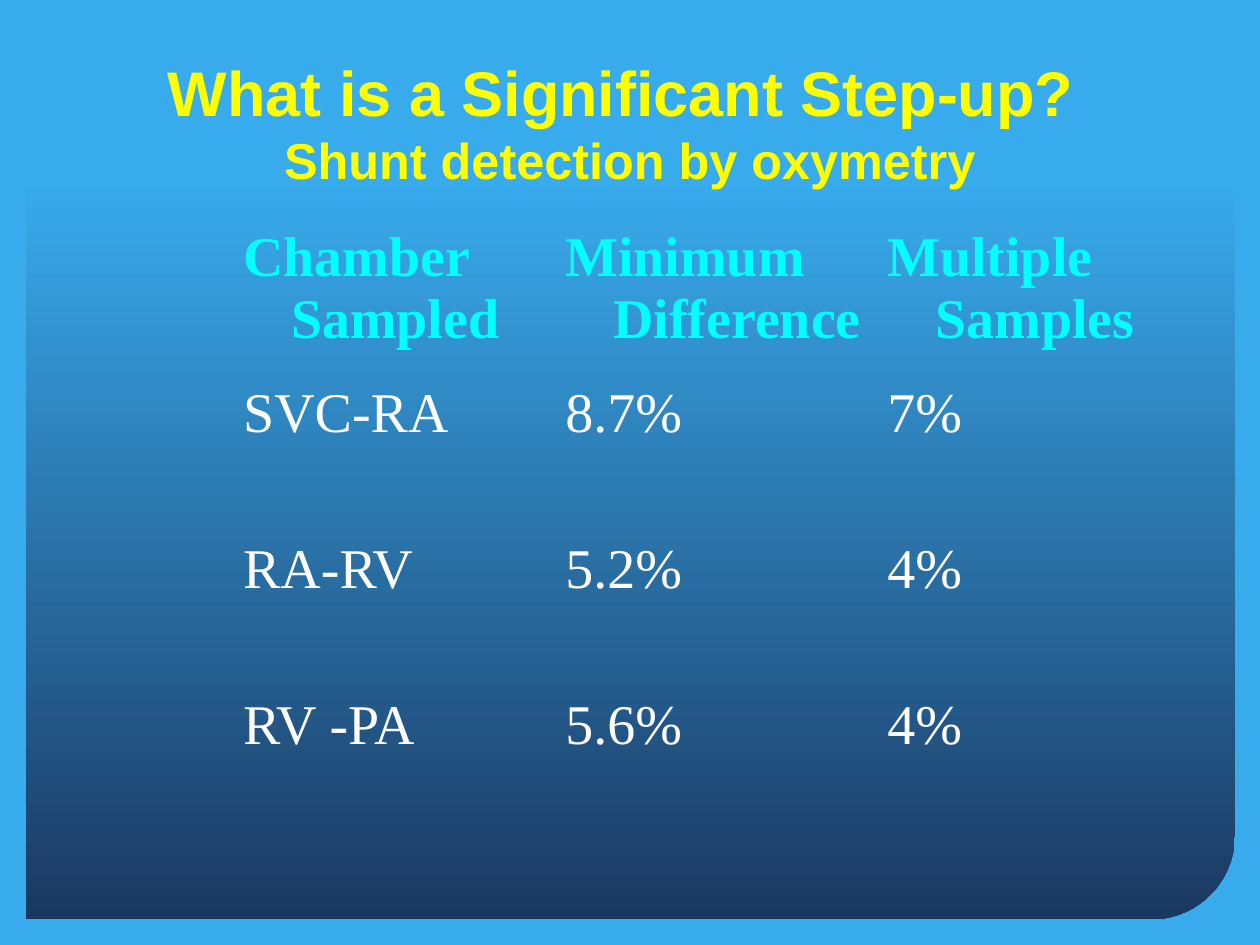
from dataclasses import dataclass

from pptx import Presentation
from pptx.dml.color import RGBColor
from pptx.enum.shapes import MSO_SHAPE
from pptx.enum.text import MSO_ANCHOR, MSO_AUTO_SIZE, PP_ALIGN
from pptx.util import Inches, Pt

PLAIN_TABLE_STYLE = "{2D5ABB26-0587-4C30-8999-92F81FD0307C}"


@dataclass(frozen=True)
class Theme:
    sky: str = "38ABED"
    navy: str = "1B3861"
    title: str = "FFFF00"
    header: str = "00FFFF"
    body: str = "FFFFFF"
    title_font: str = "Arial"
    table_font: str = "Times New Roman"
    title_size: float = 36
    subtitle_size: float = 28.8
    table_size: float = 32


class Page:
    """Holds the theme and the slide; places are shares of the slide's size."""

    def __init__(self, deck, theme):
        self.deck, self.theme = deck, theme
        self.slide = deck.slides.add_slide(deck.slide_layouts[5])
        background = self.slide.background.fill
        background.solid()
        background.fore_color.rgb = RGBColor.from_string(theme.sky)

    def area(self, left, top, width, height):
        across, down = self.deck.slide_width, self.deck.slide_height
        return (round(left * across), round(top * down),
                round(width * across), round(height * down))

    def style(self, font, name, size, color, bold):
        font.name, font.size, font.bold = name, Pt(size), bold
        font.color.rgb = RGBColor.from_string(color)

    def panel(self, *share):
        shapes = self.slide.shapes
        panel = shapes.add_shape(MSO_SHAPE.ROUND_2_DIAG_RECTANGLE, *self.area(*share))
        panel.adjustments[0], panel.adjustments[1] = 0.094, 0
        panel.shadow.inherit = False
        panel.line.fill.background()
        panel.fill.gradient()
        panel.fill.gradient_angle = 270
        stops = ((0.17, self.theme.sky), (1, self.theme.navy))
        for stop, (position, color) in zip(panel.fill.gradient_stops, stops):
            stop.position = position
            stop.color.rgb = RGBColor.from_string(color)
        shapes.title._element.addprevious(panel._element)

    def title(self, heading, subheading, *share):
        title = self.slide.shapes.title
        title.left, title.top, title.width, title.height = self.area(*share)
        frame = title.text_frame
        frame.text = f"{heading}\v{subheading}"
        frame.auto_size = MSO_AUTO_SIZE.NONE
        frame.vertical_anchor = MSO_ANCHOR.BOTTOM
        para = frame.paragraphs[0]
        para.alignment = PP_ALIGN.CENTER
        sizes = (self.theme.title_size, self.theme.subtitle_size)
        for span, size in zip(para.runs, sizes):
            self.style(span.font, self.theme.title_font, size, self.theme.title, True)

    def table(self, rows, *share):
        table = self.slide.shapes.add_table(
            len(rows), len(rows[0]), *self.area(*share)).table
        table._tbl.tblPr[0].text = PLAIN_TABLE_STYLE
        table.first_row = table.horz_banding = False
        for row_index, row in enumerate(rows):
            is_header = row_index == 0
            color = self.theme.header if is_header else self.theme.body
            for column_index, text in enumerate(row):
                cell = table.cell(row_index, column_index)
                cell.fill.background()
                cell.text = text
                para = cell.text_frame.paragraphs[0]
                self.hang(para, Inches(0.38))
                self.style(para.runs[0].font, self.theme.table_font,
                           self.theme.table_size, color, is_header)

    def hang(self, para, indent):
        """Indent every line of the paragraph but the first."""
        properties = para._p.get_or_add_pPr()
        properties.set("marL", str(indent))
        properties.set("indent", str(-indent))


def main():
    deck = Presentation()
    deck.slide_width, deck.slide_height = Inches(10), Inches(7.5)
    page = Page(deck, Theme())
    page.panel(0.021, 0.028, 0.959, 0.945)
    page.title("What is a Significant Step-up? ", "Shunt detection by oxymetry",
               0, 0.04, 1, 0.167)
    page.table([
        ("Chamber Sampled", "Minimum Difference", "Multiple Samples"),
        ("SVC-RA", "8.7%", "7%"),
        ("RA-RV", "5.2%", "4%"),
        ("RV -PA", "5.6%", "4%"),
    ], 0.183, 0.233, 0.767, 0.66)
    deck.save("out.pptx")


if __name__ == "__main__":
    main()
